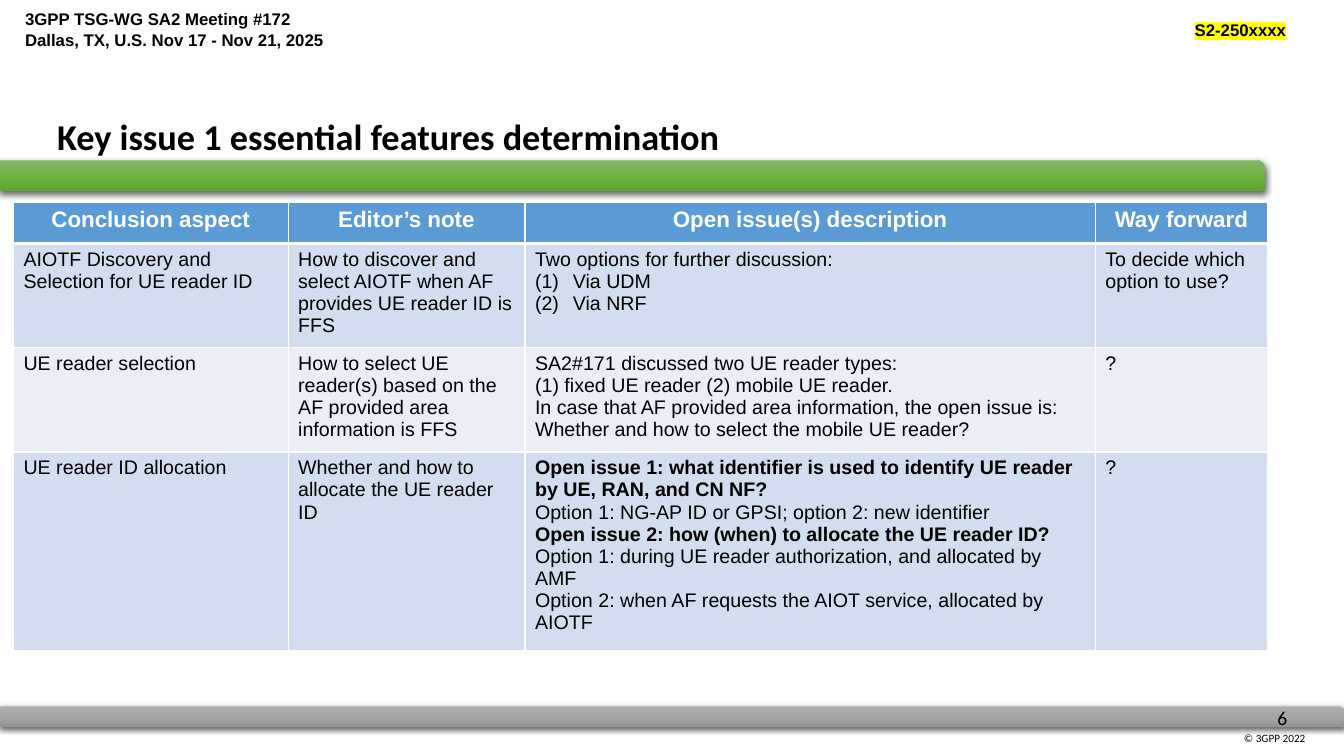
from copy import deepcopy
from dataclasses import dataclass

from lxml import etree
from pptx import Presentation
from pptx import util as u
from pptx.dml.color import RGBColor
from pptx.enum import shapes, text
from pptx.oxml.ns import qn

# Grid: 160 columns by 90 rows
WIDE, HIGH = u.Inches(13.33), u.Inches(7.5)
COLS, ROWS = 160, 90

BLACK = RGBColor(0x00, 0x00, 0x00)
WHITE = RGBColor(0xFF, 0xFF, 0xFF)
BLUE = RGBColor(0x5B, 0x9B, 0xD5)
BANDS = RGBColor(0xD2, 0xDE, 0xEF), RGBColor(0xEA, 0xEF, 0xF7)
GRAYS = RGBColor(0xAF, 0xAF, 0xAF), RGBColor(0xA5, 0xA5, 0xA5), RGBColor(0x93, 0x93, 0x93)
GREENS = RGBColor(0x81, 0xB8, 0x61), RGBColor(0x6F, 0xB2, 0x42), RGBColor(0x62, 0xA3, 0x36)
YELLOW = RGBColor(0xFF, 0xFF, 0x00)


@dataclass
class Box:
    x: float
    y: float
    w: float
    h: float


@dataclass
class Bar:
    box: Box
    shades: tuple


@dataclass
class Label:
    box: Box
    lines: tuple
    size: float
    face: str = "Calibri"
    bold: bool = False
    align: text.PP_ALIGN = text.PP_ALIGN.LEFT
    wrap: bool = True
    mark: RGBColor | None = None
    pad: bool = True
    lead: float | None = None


@dataclass
class Line:
    words: str
    bold: bool = False
    count: bool = False


def col(n: float) -> int:
    return round(WIDE * n / COLS)


def row(n: float) -> int:
    return round(HIGH * n / ROWS)


def place(box: Box) -> tuple:
    return col(box.x), row(box.y), col(box.w), row(box.h)


def add(parent, tag: str, **attrs):
    return etree.SubElement(parent, qn(tag), attrs)


def style(para, size: float, face: str, bold: bool, color: RGBColor) -> None:
    font = para.font
    font.size, font.name, font.bold = u.Pt(size), face, bold
    font.color.rgb = color


def draw_bar(slide, bar: Bar) -> None:
    shape = slide.shapes.add_shape(shapes.MSO_SHAPE.SNIP_1_RECTANGLE, *place(bar.box))
    shape.line.fill.background()
    shape.fill.gradient()
    shape.fill.gradient_angle = 270
    props = shape._element.spPr
    stops = props.find(qn("a:gradFill")).find(qn("a:gsLst"))
    stops.insert(1, deepcopy(stops[0]))
    for stop, spot, shade in zip(shape.fill.gradient_stops, (0, 0.5, 1), bar.shades):
        stop.position = spot
        stop.color.rgb = shade
    # Soft shadow below the bar
    shape.shadow.inherit = False
    cast = add(props.find(qn("a:effectLst")), "a:outerShdw", blurRad=str(u.Pt(4.5)),
               dist=str(u.Pt(1.5)), dir="5400000", rotWithShape="0")
    add(add(cast, "a:srgbClr", val=str(BLACK)), "a:alpha", val="63000")


def draw_label(slide, label: Label) -> None:
    frame = slide.shapes.add_textbox(*place(label.box)).text_frame
    frame.word_wrap = label.wrap
    if not label.pad:
        frame.margin_left = frame.margin_right = frame.margin_top = frame.margin_bottom = 0
    for i, words in enumerate(label.lines):
        para = frame.add_paragraph() if i else frame.paragraphs[0]
        run = para.add_run()
        run.text = words
        para.alignment = label.align
        if label.lead:
            para.line_spacing = label.lead
        style(para, label.size, label.face, label.bold, BLACK)
        if label.mark:
            glow = add(run._r.get_or_add_rPr(), "a:highlight")
            add(glow, "a:srgbClr", val=str(label.mark))


def draw_cell(cell, lines: tuple, head: bool, fill: RGBColor) -> None:
    # Borders come before the fill
    props = cell._tc.get_or_add_tcPr()
    for side in "LRTB":
        width = u.Pt(3 if head and side == "B" else 1)
        edge = add(props, f"a:ln{side}", w=str(width))
        add(add(edge, "a:solidFill"), "a:srgbClr", val=str(WHITE))
    cell.fill.solid()
    cell.fill.fore_color.rgb = fill
    for i, line in enumerate(lines):
        para = cell.text_frame.add_paragraph() if i else cell.text_frame.paragraphs[0]
        para.text = line.words
        if line.count:
            pose = para._p.get_or_add_pPr()
            pose.set("marL", str(col(4.5)))
            pose.set("indent", str(-col(4.5)))
            add(pose, "a:buAutoNum", type="arabicParenBoth")
        if head:
            para.alignment = text.PP_ALIGN.CENTER
        style(para, 16 if head else 14, "Arial", head or line.bold, WHITE if head else BLACK)


def draw_table(slide, x: float, y: float, wides: tuple, highs: tuple, data: tuple) -> None:
    box = Box(x, y, sum(wides), sum(highs))
    table = slide.shapes.add_table(len(highs), len(wides), *place(box)).table
    for part, wide in zip(table.columns, wides):
        part.width = col(wide)
    for r, (part, high) in enumerate(zip(table.rows, highs)):
        part.height = row(high)
        fill = BANDS[(r - 1) % 2] if r else BLUE
        for cell, lines in zip(part.cells, data[r]):
            draw_cell(cell, lines, r == 0, fill)


BARS = (
    Bar(Box(0, 84.1, 160, 2.4), GRAYS),
    Bar(Box(-0.1, 19.1, 150.7, 3.6), GREENS),
)
LABELS = (
    Label(Box(146.9, 86.5, 13, 2.8), ("© 3GPP 2022",), 8),
    Label(Box(150.9, 83.4, 5.2, 4.1), ("6",), 14, wrap=False),
    Label(Box(1.8, 0.5, 50.5, 6),
          ("3GPP TSG-WG SA2 Meeting #172", "Dallas, TX, U.S. Nov 17 - Nov 21, 2025"),
          12, "Arial", True),
    Label(Box(120.2, 1.8, 34.1, 3.6), ("S2-250xxxx",), 12, "Arial", True,
          text.PP_ALIGN.RIGHT, mark=YELLOW),
    Label(Box(6.8, 12.1, 117.7, 6.2), ("Key issue 1 essential features determination",),
          25.9, bold=True, pad=False, lead=1.3),
)
ISSUES = (
    ((Line("Conclusion aspect"),), (Line("Editor’s note"),),
     (Line("Open issue(s) description"),), (Line("Way forward"),)),
    ((Line("AIOTF Discovery and Selection for UE reader ID"),),
     (Line("How to discover and select AIOTF when AF provides UE reader ID is FFS"),),
     (Line("Two options for further discussion:"),
      Line("Via UDM", count=True), Line("Via NRF", count=True)),
     (Line("To decide which option to use?"),)),
    ((Line("UE reader selection"),),
     (Line("How to select UE reader(s) based on the AF provided area information is FFS"),),
     (Line("SA2#171 discussed two UE reader types:"),
      Line("(1) fixed UE reader (2) mobile UE reader."),
      Line("In case that AF provided area information, the open issue is:"),
      Line("Whether and how to select the mobile UE reader?")),
     (Line("?"),)),
    ((Line("UE reader ID allocation"),),
     (Line("Whether and how to allocate the UE reader ID"),),
     (Line("Open issue 1: what identifier is used to identify UE reader by UE, RAN, and CN NF?",
           bold=True),
      Line("Option 1: NG-AP ID or GPSI; option 2: new identifier"),
      Line("Open issue 2: how (when) to allocate the UE reader ID?", bold=True),
      Line("Option 1: during UE reader authorization, and allocated by AMF"),
      Line("Option 2: when AF requests the AIOT service, allocated by AIOTF")),
     (Line("?"),)),
)


def main() -> None:
    deck = Presentation()
    deck.slide_width, deck.slide_height = WIDE, HIGH
    slide = deck.slides.add_slide(deck.slide_layouts[6])
    for bar in BARS:
        draw_bar(slide, bar)
    for label in LABELS:
        draw_label(slide, label)
    draw_table(slide, 1.6, 24.1, (32.7, 28.2, 67.9, 20.5), (4.9, 12.4, 12.4, 23.6), ISSUES)
    deck.save("out.pptx")


if __name__ == "__main__":
    main()
